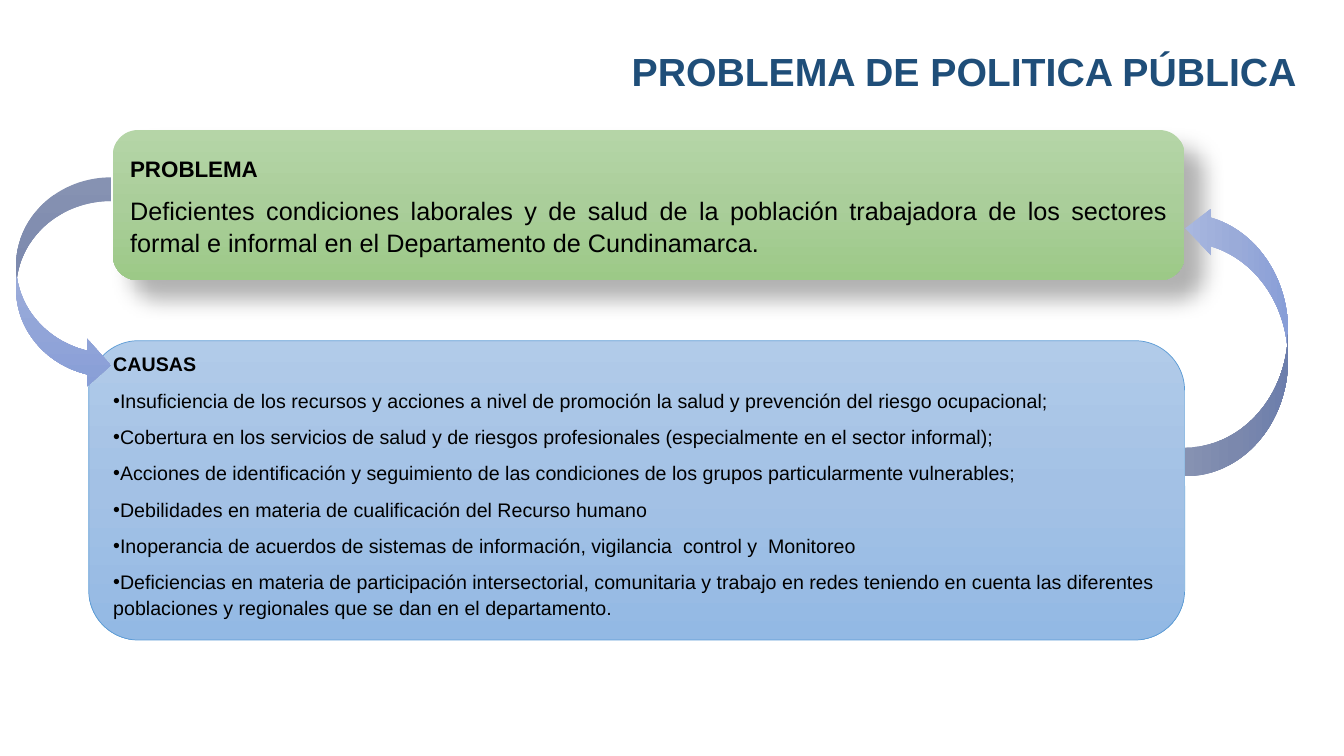
from dataclasses import dataclass

from lxml.etree import SubElement
from pptx import Presentation
from pptx.dml.color import RGBColor
from pptx.enum.shapes import MSO_SHAPE as Preset
from pptx.enum.text import MSO_ANCHOR as Anchor, PP_ALIGN as Align
from pptx.oxml import parse_xml
from pptx.oxml.ns import nsdecls, qn
from pptx.util import Inches, Pt

TITLE = "PROBLEMA DE POLITICA PÚBLICA"
PROBLEM_HEADING = "PROBLEMA"
PROBLEM = (
    "Deficientes condiciones laborales y de salud de la población trabajadora "
    "de los sectores formal e informal en el Departamento de Cundinamarca."
)
CAUSES_HEADING = "CAUSAS"
CAUSES = [
    "Insuficiencia de los recursos y acciones a nivel de promoción la salud y prevención del riesgo ocupacional;",
    "Cobertura en los servicios de salud y de riesgos profesionales (especialmente en el sector informal);",
    "Acciones de identificación y seguimiento de las condiciones de los grupos particularmente vulnerables;",
    "Debilidades en materia de cualificación del Recurso humano",
    "Inoperancia de acuerdos de sistemas de información, vigilancia  control y  Monitoreo",
    "Deficiencias en materia de participación intersectorial, comunitaria y trabajo en redes "
    "teniendo en cuenta las diferentes poblaciones y regionales que se dan en el departamento.",
]


@dataclass(frozen=True)
class Theme:
    font: str = "Arial"
    title_color: str = "1F4E79"
    text_color: str = "000000"
    causes_line: str = "5B9BD5"
    green: tuple = ("B5D5A7", "AACE9A", "9CC987")
    blue: tuple = ("B1CBE9", "A3C1E5", "93B9E4")
    violet: tuple = ("A8B7DF", "9AABD9", "889ED7")
    title_size: int = 28
    problem_heading_size: int = 16
    problem_size: int = 18
    causes_size: int = 14


THEME = Theme()


def fill_gradient(shape, colors):
    stops = "".join(
        f'<a:gs pos="{index * 50000}"><a:srgbClr val="{color}"/></a:gs>'
        for index, color in enumerate(colors)
    )
    gradient = parse_xml(
        f'<a:gradFill {nsdecls("a")} rotWithShape="1"><a:gsLst>{stops}</a:gsLst>'
        '<a:lin ang="5400000" scaled="0"/></a:gradFill>'
    )
    shape._element.spPr.find(qn("a:prstGeom")).addnext(gradient)


def add_preset(slide, preset, box, colors):
    shape = slide.shapes.add_shape(preset, *map(Inches, box))
    shape.shadow.inherit = False
    shape.line.fill.background()
    fill_gradient(shape, colors)
    shape.text_frame.vertical_anchor = Anchor.MIDDLE
    return shape


def add_drop_shadow(shape):
    effects = shape._element.spPr.find(qn("a:effectLst"))
    effects.append(parse_xml(
        f'<a:outerShdw {nsdecls("a")} blurRad="{Pt(15)}" dist="{Pt(18)}" dir="2700000" '
        'algn="tl" rotWithShape="0"><a:srgbClr val="000000"><a:alpha val="30000"/>'
        '</a:srgbClr></a:outerShdw>'
    ))


def write(paragraph, text, size, color=THEME.text_color, bold=False, align=Align.LEFT):
    paragraph.alignment = align
    run = paragraph.add_run()
    run.text = text
    run.font.name = THEME.font
    run.font.size = Pt(size)
    run.font.bold = bold
    run.font.color.rgb = RGBColor.from_string(color)


def set_spacing(paragraph, after=8):
    paragraph.line_spacing = 1.07
    paragraph.space_after = Pt(after)


def add_bullet(paragraph):
    properties = paragraph._p.get_or_add_pPr()
    properties.set("marL", "0")
    properties.set("indent", "0")
    SubElement(properties, qn("a:buFont")).set("typeface", THEME.font)
    SubElement(properties, qn("a:buChar")).set("char", "•")


def add_title(slide):
    title = slide.shapes.title
    title.left, title.top, title.width, title.height = map(Inches, (5.18, 0.42, 7.78, 0.57))
    frame = title.text_frame
    frame.word_wrap = True
    frame.vertical_anchor = Anchor.TOP
    write(frame.paragraphs[0], TITLE, THEME.title_size, THEME.title_color, True, Align.RIGHT)


def add_causes(slide):
    box = add_preset(slide, Preset.ROUNDED_RECTANGLE, (0.88, 3.38, 10.87, 2.97), THEME.blue)
    box.line.color.rgb = RGBColor.from_string(THEME.causes_line)
    box.line.width = Pt(0.5)
    frame = box.text_frame
    frame.margin_bottom = Inches(0.16)
    heading = frame.paragraphs[0]
    set_spacing(heading)
    write(heading, CAUSES_HEADING, THEME.causes_size, bold=True)
    for cause in CAUSES:
        paragraph = frame.add_paragraph()
        add_bullet(paragraph)
        set_spacing(paragraph)
        write(paragraph, cause, THEME.causes_size)


def add_problem(slide):
    box = add_preset(slide, Preset.ROUNDED_RECTANGLE, (1.12, 1.29, 10.63, 1.49), THEME.green)
    add_drop_shadow(box)
    heading = box.text_frame.paragraphs[0]
    set_spacing(heading)
    write(heading, PROBLEM_HEADING, THEME.problem_heading_size, bold=True, align=Align.JUSTIFY)
    statement = box.text_frame.add_paragraph()
    set_spacing(statement, 0)
    write(statement, PROBLEM, THEME.problem_size, align=Align.JUSTIFY)


def add_cycle_arrows(slide):
    add_preset(slide, Preset.CURVED_RIGHT_ARROW, (0.16, 1.76, 0.94, 2.1), THEME.violet)
    return_arrow = add_preset(slide, Preset.CURVED_UP_ARROW, (10.92, 2.87, 2.69, 1.02), THEME.violet)
    return_arrow.rotation = 270
    for index, value in enumerate((0.28, 0.45, 0.25)):
        return_arrow.adjustments[index] = value


def main():
    presentation = Presentation()
    presentation.slide_width = Inches(13.33)
    presentation.slide_height = Inches(7.5)
    slide = presentation.slides.add_slide(presentation.slide_layouts.get_by_name("Title Only"))
    add_title(slide)
    add_causes(slide)
    add_problem(slide)
    add_cycle_arrows(slide)
    presentation.save("out.pptx")


if __name__ == "__main__":
    main()
